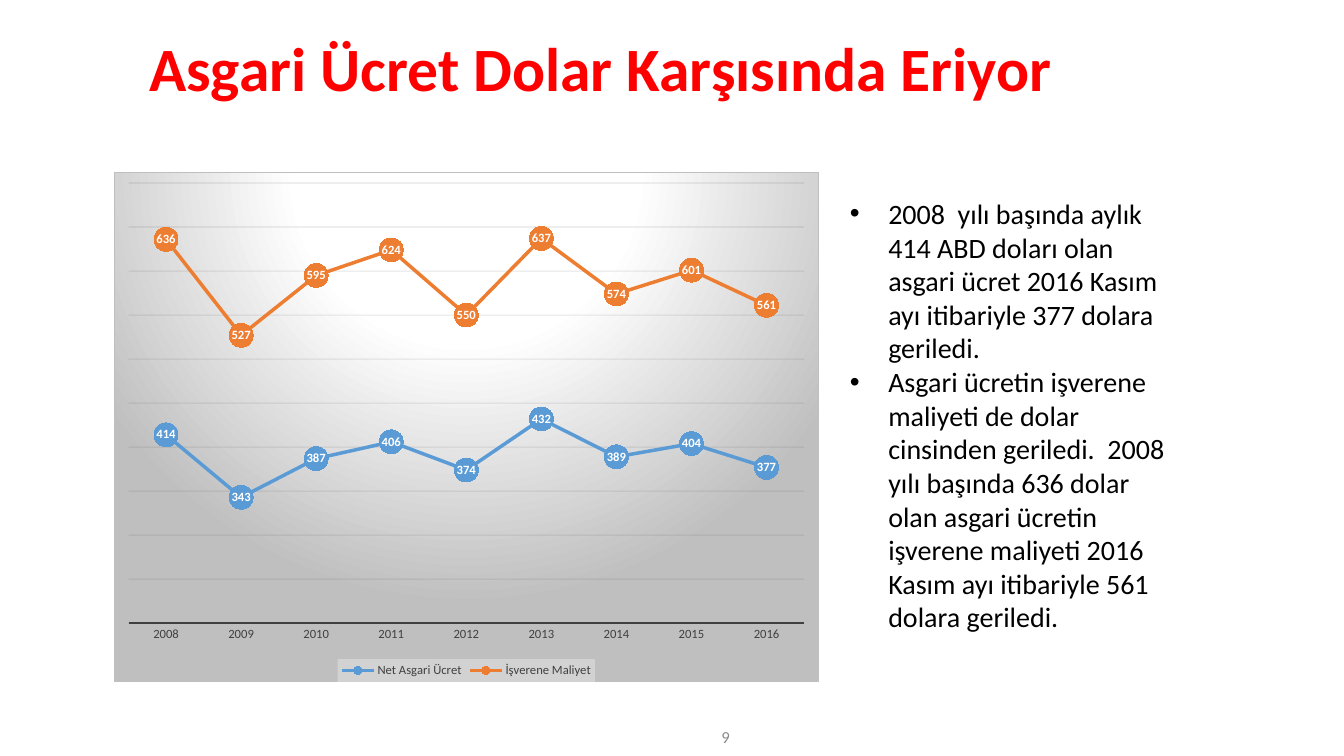
from lxml.etree import SubElement as Sub
from pptx import Presentation
from pptx.chart.data import CategoryChartData as Data
from pptx.dml.color import RGBColor as Rgb
from pptx.enum.chart import XL_CHART_TYPE as Kind
from pptx.enum.chart import XL_LABEL_POSITION as Spot
from pptx.enum.chart import XL_LEGEND_POSITION as Side
from pptx.enum.chart import XL_MARKER_STYLE as Mark
from pptx.enum.chart import XL_TICK_MARK as Tick
from pptx.enum.text import MSO_ANCHOR as Anchor
from pptx.enum.text import MSO_AUTO_SIZE as Fit
from pptx.enum.text import PP_ALIGN as Align
from pptx.oxml import parse_xml
from pptx.oxml.ns import nsdecls, qn
from pptx.util import Inches, Pt

FONT = "Calibri"
HUES = {"title": "FF0000", "text": "000000", "page": "8C8C8C",
        "axis": "404040", "grid": "0D0D0D", "edge": "BFBFBF",
        "pale": "FFFFFF", "key": "F2F2F2", "net": "5B9BD5", "cost": "ED7D31"}
WIDE, HIGH = Inches(13.33), Inches(7.5)
COL, ROW = WIDE / 100, HIGH / 100
YEARS = [str(year) for year in range(2008, 2017)]
LINES = [
    ("Net Asgari Ücret", "net",
     [414, 343, 387, 406, 374, 432, 389, 404, 377]),
    ("İşverene Maliyet", "cost",
     [636, 527, 595, 624, 550, 637, 574, 601, 561]),
]
NOTES = [
    "2008  yılı başında aylık 414 ABD doları olan asgari ücret 2016 Kasım "
    "ayı itibariyle 377 dolara geriledi.",
    "Asgari ücretin işverene maliyeti de dolar cinsinden geriledi.  2008 yılı "
    "başında 636 dolar olan asgari ücretin işverene maliyeti 2016 Kasım ayı "
    "itibariyle 561 dolara geriledi.",
]


def area(left, top, width, height):
    """Turn columns and rows of a 100 by 100 grid into slide lengths."""
    return [round(n) for n in (left * COL, top * ROW, width * COL, height * ROW)]


def place(shape, box):
    """Move a shape to its box."""
    shape.left, shape.top, shape.width, shape.height = box


def style(font, size, hue, bold=False):
    """Set the face, size, colour and weight of a font."""
    font.name, font.size, font.bold = FONT, Pt(size), bold
    font.color.rgb = Rgb.from_string(HUES[hue])


def write(shape, texts, size=20, hue="text", bold=False, align=Align.LEFT,
          anchor=Anchor.TOP, space=1.0, hang=0, fit=Fit.NONE):
    """Fill a shape with formatted paragraphs."""
    frame = shape.text_frame
    frame.word_wrap, frame.auto_size = True, fit
    frame.vertical_anchor = anchor
    for i, text in enumerate(texts):
        para = frame.add_paragraph() if i else frame.paragraphs[0]
        para.alignment, para.line_spacing = align, space
        para.space_before = para.space_after = Pt(0)
        if hang:
            prop = para._p.get_or_add_pPr()
            prop.set("marL", str(Inches(hang)))
            prop.set("indent", str(-Inches(hang)))
            Sub(prop, qn("a:buFont")).set("typeface", "Arial")
            Sub(prop, qn("a:buChar")).set("char", "•")
        run = para.add_run()
        run.text = text
        style(run.font, size, hue, bold)


def stroke(line, hue, width):
    """Give a line its colour and width."""
    line.color.rgb = Rgb.from_string(HUES[hue])
    line.width = Pt(width)


def panel(chart):
    """Shade the chart area and its legend, and fix the plot's place."""
    root = chart.element
    stops = "".join(
        f'<a:gs pos="{pos}"><a:srgbClr val="{HUES[hue]}"/></a:gs>'
        for pos, hue in ((0, "pale"), (39000, "pale"), (100000, "edge")))
    root.find(qn("c:chart")).addnext(parse_xml(
        f'<c:spPr {nsdecls("c", "a")}><a:gradFill><a:gsLst>{stops}</a:gsLst>'
        '<a:path path="circle"><a:fillToRect l="50000" t="-80000" r="50000" '
        f'b="180000"/></a:path></a:gradFill><a:ln w="{Pt(0.75)}"><a:solidFill>'
        f'<a:srgbClr val="{HUES["edge"]}"/></a:solidFill></a:ln></c:spPr>'))
    root.find(".//" + qn("c:legend")).find(qn("c:overlay")).addnext(parse_xml(
        f'<c:spPr {nsdecls("c", "a")}><a:solidFill><a:srgbClr '
        f'val="{HUES["key"]}"><a:alpha val="39000"/></a:srgbClr></a:solidFill>'
        '</c:spPr>'))
    plot = root.find(".//" + qn("c:plotArea"))
    for old in plot.findall(qn("c:layout")):
        plot.remove(old)
    parts = "".join(f'<c:{tag} val="{val}"/>' for tag, val in (
        ("layoutTarget", "inner"), ("xMode", "edge"), ("yMode", "edge"),
        ("x", 0.02), ("y", 0.02), ("w", 0.96), ("h", 0.865)))
    plot.insert(0, parse_xml(
        f'<c:layout {nsdecls("c")}><c:manualLayout>{parts}</c:manualLayout>'
        '</c:layout>'))


def axes(chart):
    """Format the year axis and the hidden value axis."""
    years, vals = chart.category_axis, chart.value_axis
    years.major_tick_mark = years.minor_tick_mark = Tick.NONE
    style(years.tick_labels.font, 9, "axis")
    stroke(years.format.line, "axis", 1.5)
    vals.visible = False
    vals.minimum_scale, vals.maximum_scale, vals.major_unit = 200, 700, 50
    vals.has_major_gridlines = True
    grid = vals.major_gridlines.format.line
    stroke(grid, "grid", 0.75)
    tint = vals.major_gridlines._xAx.find(".//" + qn("a:srgbClr"))
    Sub(tint, qn("a:alpha")).set("val", "10000")


def graph(slide, box):
    """Draw the wage and cost lines."""
    data = Data()
    data.categories = YEARS
    for name, _, vals in LINES:
        data.add_series(name, vals)
    chart = slide.shapes.add_chart(Kind.LINE_MARKERS, *box, data).chart
    style(chart.font, 10, "text")
    chart.has_title, chart.has_legend = False, True
    chart.legend.position = Side.BOTTOM
    chart.legend.include_in_layout = False
    style(chart.legend.font, 9, "axis")
    chart.plots[0].vary_by_categories = False
    for line, (_, hue, _) in zip(chart.plots[0].series, LINES):
        line.smooth = False
        stroke(line.format.line, hue, 2.5)
        line.marker.style, line.marker.size = Mark.CIRCLE, 17
        line.marker.format.fill.solid()
        line.marker.format.fill.fore_color.rgb = Rgb.from_string(HUES[hue])
        line.marker.format.line.fill.background()
        tags = line.data_labels
        tags.show_value, tags.position = True, Spot.CENTER
        tags.number_format, tags.number_format_is_linked = "0", False
        style(tags.font, 9, "pale", bold=True)
    axes(chart)
    panel(chart)


def head(slide, box):
    """Set the slide title."""
    place(slide.shapes.title, box)
    write(slide.shapes.title, ["Asgari Ücret Dolar Karşısında Eriyor"], size=44,
          hue="title", bold=True, anchor=Anchor.MIDDLE, space=0.9)


def notes(slide, box):
    """Set the bullet list."""
    body = slide.placeholders[1]
    place(body, box)
    write(body, NOTES, hang=0.38, fit=Fit.SHAPE_TO_FIT_TEXT)


def page(slide, box):
    """Set the page number."""
    write(slide.shapes.add_textbox(*box), ["9"], size=12, hue="page",
          align=Align.RIGHT, anchor=Anchor.MIDDLE)


def main():
    """Build the slide and save it."""
    deck = Presentation()
    deck.slide_width, deck.slide_height = WIDE, HIGH
    slide = deck.slides.add_slide(deck.slide_layouts[1])
    head(slide, area(10.35, 4.13, 81.17, 10.8))
    graph(slide, area(8.48, 22.8, 52.44, 67.47))
    notes(slide, area(62.49, 25.33, 25.73, 59.73))
    page(slide, area(32.56, 94.8, 22.5, 5.33))
    deck.save("out.pptx")


if __name__ == "__main__":
    main()
